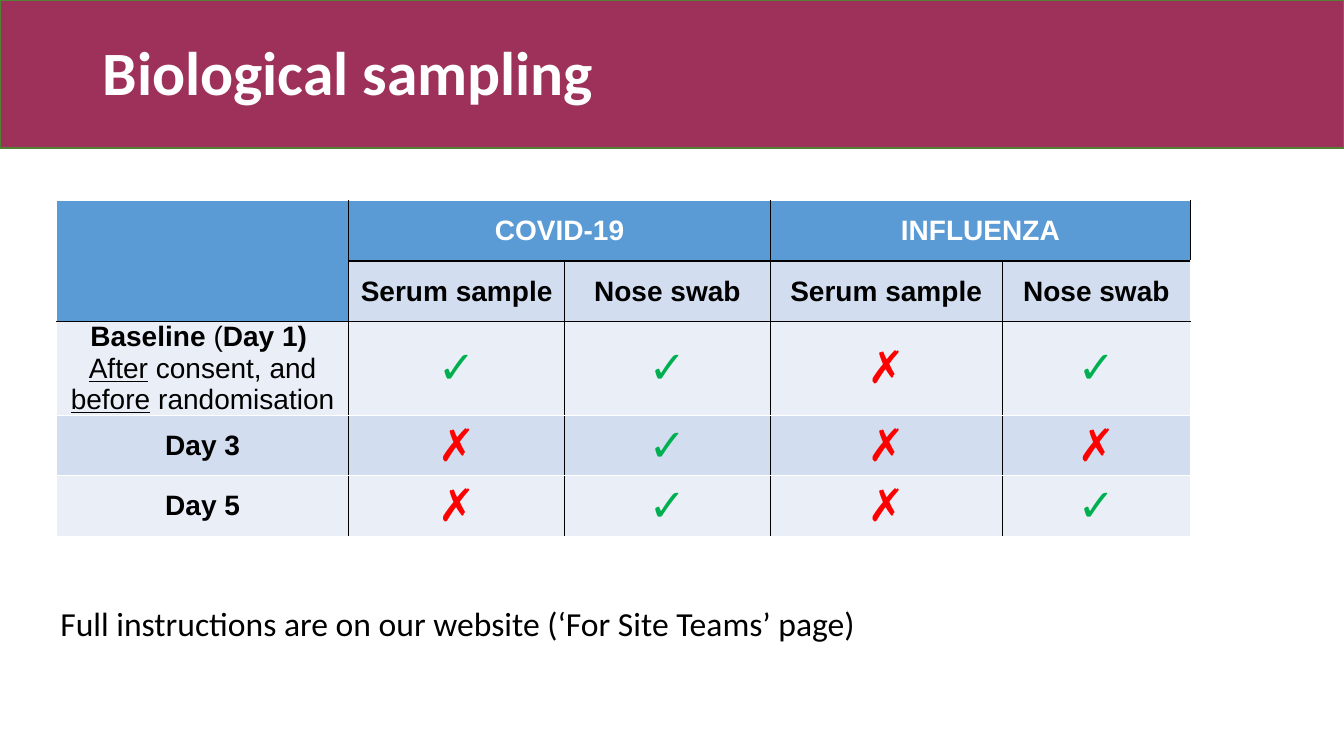
from dataclasses import dataclass

from lxml.etree import SubElement
from pptx import Presentation
from pptx.dml.color import RGBColor
from pptx.enum.shapes import MSO_SHAPE
from pptx.enum.text import MSO_ANCHOR, PP_ALIGN
from pptx.oxml.ns import qn
from pptx.slide import Slide
from pptx.table import Table, _Cell
from pptx.util import Inches, Pt


@dataclass(frozen=True)
class Theme:
    banner: str = "9E3159"
    banner_line: str = "538035"
    header: str = "5B9BD5"
    dark_band: str = "D2DEEF"
    light_band: str = "EAEFF7"
    white: str = "FFFFFF"
    black: str = "000000"
    taken: str = "00B050"
    not_taken: str = "FF0000"
    heading_font: str = "Calibri"
    table_font: str = "Arial"
    title_size: int = 44
    note_size: int = 24
    label_size: int = 20
    mark_size: int = 32


@dataclass(frozen=True)
class Run:
    text: str
    bold: bool = False
    underline: bool = False


@dataclass(frozen=True)
class Style:
    size: int
    color: str
    font: str


@dataclass(frozen=True)
class TextLine:
    text: str
    box: tuple[float, float, float, float]
    style: Style
    anchor: MSO_ANCHOR
    bold: bool = False
    line_spacing: float = 1.0
    indent: float = 0


@dataclass(frozen=True)
class Visit:
    label: list[list[Run]]
    marks: str


THEME = Theme()
HEADER_STYLE = Style(THEME.label_size, THEME.white, THEME.table_font)
LABEL_STYLE = Style(THEME.label_size, THEME.black, THEME.table_font)
MARK_STYLES = {
    "✓": Style(THEME.mark_size, THEME.taken, THEME.table_font),
    "✗": Style(THEME.mark_size, THEME.not_taken, THEME.table_font),
}

TEXT_LINES = [
    TextLine("Biological sampling", (0.92, 0.02, 11.5, 1.45),
             Style(THEME.title_size, THEME.white, THEME.heading_font),
             MSO_ANCHOR.MIDDLE, bold=True, line_spacing=0.9),
    TextLine("Full instructions are on our website (‘For Site Teams’ page)",
             (0, 5.93, 12.79, 0.5),
             Style(THEME.note_size, THEME.black, THEME.heading_font),
             MSO_ANCHOR.TOP, indent=0.5),
]

COLUMN_WIDTHS = [2.9, 2.14, 2.04, 2.3, 1.87]
ROW_HEIGHTS = [0.6, 0.6, 0.82, 0.6, 0.6]
DISEASES = ["COVID-19", "INFLUENZA"]
SAMPLES = ["Serum sample", "Nose swab"]
VISITS = [
    Visit([[Run("Baseline", bold=True), Run(" ("), Run("Day 1) ", bold=True)],
           [Run("After", underline=True), Run(" consent, and "),
            Run("before", underline=True), Run(" randomisation")]], "✓✓✗✓"),
    Visit([[Run("Day 3", bold=True)]], "✗✓✗✗"),
    Visit([[Run("Day 5", bold=True)]], "✗✓✗✓"),
]


def apply_style(font, style: Style) -> None:
    font.name = style.font
    font.size = Pt(style.size)
    font.color.rgb = RGBColor.from_string(style.color)


def add_banner(slide: Slide) -> None:
    shape = slide.shapes.add_shape(MSO_SHAPE.RECTANGLE, 0, 0, Inches(13.33), Inches(1.47))
    shape.shadow.inherit = False
    shape.fill.solid()
    shape.fill.fore_color.rgb = RGBColor.from_string(THEME.banner)
    shape.line.color.rgb = RGBColor.from_string(THEME.banner_line)
    shape.line.width = Pt(1)


def add_text_line(slide: Slide, line: TextLine) -> None:
    frame = slide.shapes.add_textbox(*map(Inches, line.box)).text_frame
    frame.word_wrap = True
    frame.vertical_anchor = line.anchor
    paragraph = frame.paragraphs[0]
    paragraph.text = line.text
    paragraph.line_spacing = line.line_spacing
    if line.indent:
        paragraph._p.get_or_add_pPr().set("marL", str(Inches(line.indent)))
    apply_style(paragraph.font, line.style)
    paragraph.font.bold = line.bold


def fill_cell(cell: _Cell, lines: list[list[Run]], style: Style) -> None:
    cell.vertical_anchor = MSO_ANCHOR.MIDDLE
    cell.margin_left = cell.margin_right = Inches(0.07)
    cell.margin_top = cell.margin_bottom = 0
    frame = cell.text_frame
    for index, runs in enumerate(lines):
        paragraph = frame.add_paragraph() if index else frame.paragraphs[0]
        paragraph.alignment = PP_ALIGN.CENTER
        apply_style(paragraph.font, style)
        for part in runs:
            run = paragraph.add_run()
            run.text = part.text
            # Runs carry the style too, so it outranks the table style
            apply_style(run.font, style)
            run.font.bold = part.bold
            run.font.underline = part.underline


def set_borders(cell: _Cell, black_sides: dict[str, bool]) -> None:
    properties = cell._tc.get_or_add_tcPr()
    for index, (side, is_black) in enumerate(black_sides.items()):
        line = SubElement(properties, qn(f"a:ln{side}"), w=str(Pt(1)))
        fill = SubElement(line, qn("a:solidFill"))
        SubElement(fill, qn("a:srgbClr"), val=THEME.black if is_black else THEME.white)
        properties.insert(index, line)


def format_grid(table: Table) -> None:
    last_column = len(COLUMN_WIDTHS) - 1
    for row in range(len(ROW_HEIGHTS)):
        for column in range(len(COLUMN_WIDTHS)):
            cell = table.cell(row, column)
            is_header = row == 0 or (row == 1 and column == 0)
            band = THEME.dark_band if row % 2 else THEME.light_band
            cell.fill.solid()
            cell.fill.fore_color.rgb = RGBColor.from_string(THEME.header if is_header else band)
            set_borders(cell, {"L": column > 0, "R": column < last_column,
                               "T": row in (1, 2), "B": row in (0, 1)})


def add_sampling_table(slide: Slide) -> None:
    table = slide.shapes.add_table(
        len(ROW_HEIGHTS), len(COLUMN_WIDTHS), Inches(0.56), Inches(1.99),
        Inches(sum(COLUMN_WIDTHS)), Inches(sum(ROW_HEIGHTS))).table
    for column, width in zip(table.columns, COLUMN_WIDTHS):
        column.width = Inches(width)
    for row, height in zip(table.rows, ROW_HEIGHTS):
        row.height = Inches(height)
    format_grid(table)

    # Two header rows: diseases above their samples
    table.cell(0, 0).merge(table.cell(1, 0))
    for group, disease in enumerate(DISEASES):
        first = 1 + group * len(SAMPLES)
        table.cell(0, first).merge(table.cell(0, first + len(SAMPLES) - 1))
        fill_cell(table.cell(0, first), [[Run(disease, bold=True)]], HEADER_STYLE)
        for offset, sample in enumerate(SAMPLES):
            fill_cell(table.cell(1, first + offset), [[Run(sample, bold=True)]], LABEL_STYLE)

    # One row per visit
    for row, visit in enumerate(VISITS, start=2):
        fill_cell(table.cell(row, 0), visit.label, LABEL_STYLE)
        for column, mark in enumerate(visit.marks, start=1):
            fill_cell(table.cell(row, column), [[Run(mark)]], MARK_STYLES[mark])


def main() -> None:
    presentation = Presentation()
    presentation.slide_width = Inches(13.33)
    presentation.slide_height = Inches(7.5)
    slide = presentation.slides.add_slide(presentation.slide_layouts[6])
    add_banner(slide)
    add_sampling_table(slide)
    for line in TEXT_LINES:
        add_text_line(slide, line)
    presentation.save("out.pptx")


if __name__ == "__main__":
    main()
